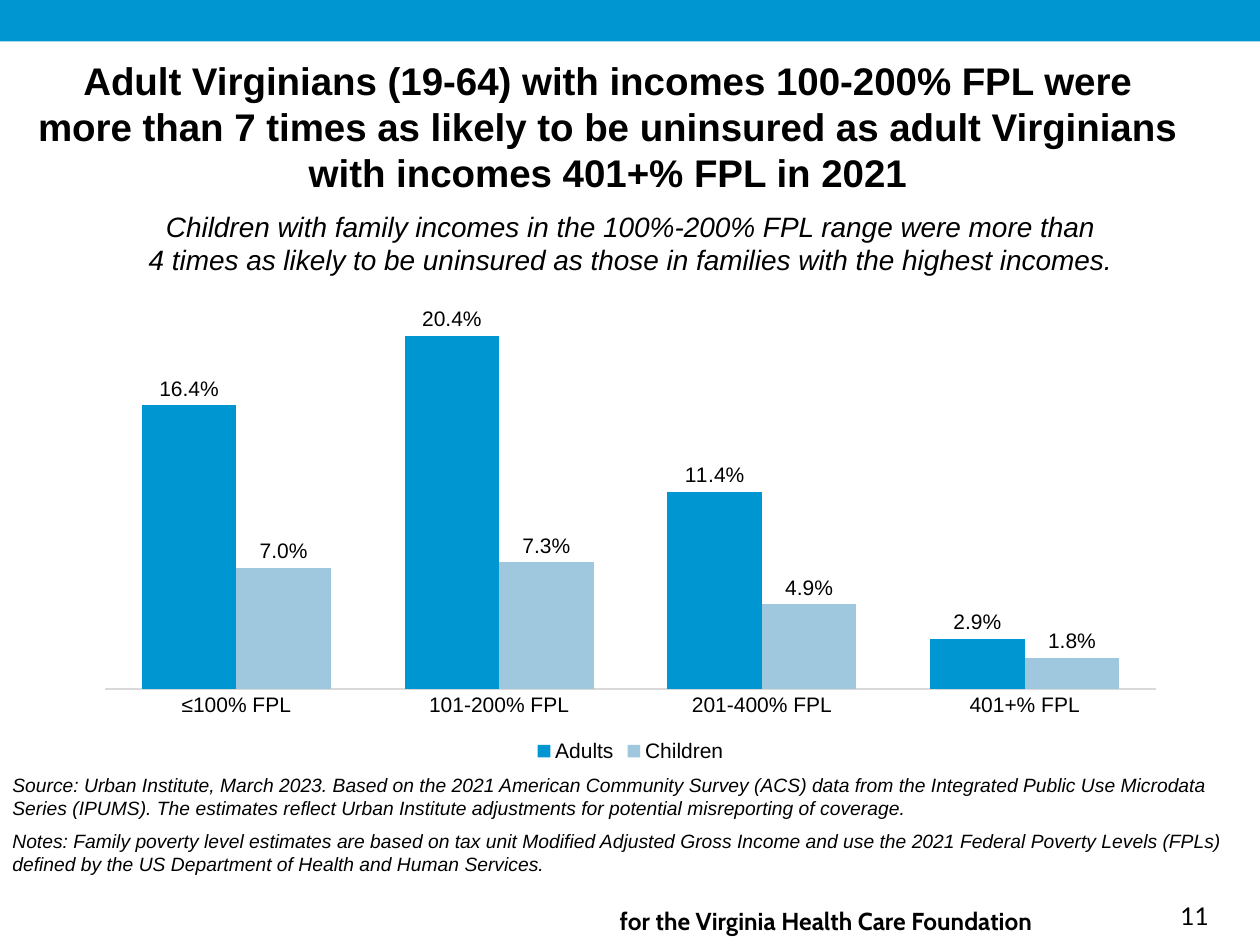
from lxml import etree
from pptx import Presentation, util as u
from pptx.chart.data import CategoryChartData
from pptx.dml.color import RGBColor
from pptx.enum import chart as charts, shapes, text
from pptx.oxml.ns import qn

COLORS = {"adults": "0096D2", "children": "9FC7DE", "ink": "000000", "axis": "D9D9D9"}
WIDTH, HEIGHT = u.Inches(10), u.Inches(7.5)


class SlideBuilder:
    """Hold the style and slide; boxes are percentages of the slide's size."""

    def __init__(self, slide, font_name="Arial"):
        self.slide = slide
        self.font_name = font_name

    def color(self, name):
        return RGBColor.from_string(COLORS[name])

    def place(self, box):
        return [int(share * side / 100) for share, side in zip(box, (WIDTH, HEIGHT) * 2)]

    def style(self, font, size, name=None, bold=False, italic=False):
        font.size, font.name = u.Pt(size), name or self.font_name
        font.bold, font.italic = bold, italic
        font.color.rgb = self.color("ink")

    def band(self, box, color):
        shape = self.slide.shapes.add_shape(shapes.MSO_SHAPE.RECTANGLE, *self.place(box))
        shape.shadow.inherit = False
        shape.fill.solid()
        shape.fill.fore_color.rgb = self.color(color)
        shape.line.fill.background()

    def text(self, box, lines, size, centered=False, gap=0, **look):
        frame = self.slide.shapes.add_textbox(*self.place(box)).text_frame
        frame.word_wrap = True
        for index, line in enumerate(lines):
            paragraph = frame.add_paragraph() if index else frame.paragraphs[0]
            paragraph.text = line
            if centered:
                paragraph.alignment = text.PP_ALIGN.CENTER
            if index and gap:
                paragraph.space_before = u.Pt(gap)
            self.style(paragraph.font, size, **look)

    def columns(self, box, categories, series, layout, size=12):
        data = CategoryChartData(number_format="0.0%")
        data.categories = categories
        for name, values, _ in series:
            data.add_series(name, values)
        chart = self.slide.shapes.add_chart(
            charts.XL_CHART_TYPE.COLUMN_CLUSTERED, *self.place(box), data).chart
        self.style(chart.font, size)
        chart.has_title = False
        chart.has_legend = True
        chart.legend.position = charts.XL_LEGEND_POSITION.BOTTOM
        chart.legend.include_in_layout = False
        self.style(chart.legend.font, size)

        values = chart.value_axis
        values.visible = values.has_major_gridlines = False
        values.minimum_scale, values.maximum_scale = 0, 0.25
        axis = chart.category_axis
        axis.major_tick_mark = charts.XL_TICK_MARK.NONE
        axis.format.line.color.rgb = self.color("axis")
        axis.format.line.width = u.Pt(0.75)
        self.style(axis.tick_labels.font, size)

        plot = chart.plots[0]
        plot.gap_width, plot.overlap, plot.vary_by_categories = 78, 0, False
        for bars, (_, _, color) in zip(plot.series, series):
            bars.format.fill.solid()
            bars.format.fill.fore_color.rgb = self.color(color)
            labels = bars.data_labels
            labels.show_value = True
            labels.number_format, labels.number_format_is_linked = "0.0%", False
            labels.position = charts.XL_LABEL_POSITION.OUTSIDE_END
            self.style(labels.font, size)
        self.fix_plot(chart, layout)

    def fix_plot(self, chart, layout):
        area = chart.plots[0]._element.getparent()
        for old in area.findall(qn("c:layout")):
            area.remove(old)
        holder = etree.Element(qn("c:layout"))
        area.insert(0, holder)
        manual = etree.SubElement(holder, qn("c:manualLayout"))
        settings = [("layoutTarget", "inner"), ("xMode", "edge"), ("yMode", "edge")]
        for tag, value in settings + list(zip("xywh", layout)):
            etree.SubElement(manual, qn("c:" + tag)).set("val", str(value))


def main():
    presentation = Presentation()
    presentation.slide_width, presentation.slide_height = WIDTH, HEIGHT
    builder = SlideBuilder(presentation.slides.add_slide(presentation.slide_layouts[6]))

    builder.band((0, 0, 100, 4.4), "adults")
    builder.text((92.7, 94.67, 7.3, 4.53), ["11"], 14, name="Lato")
    builder.text((1.5, 5.33, 93.5, 16.13), [
        "Adult Virginians (19-64) with incomes 100-200% FPL were more than 7 times as likely "
        "to be uninsured as adult Virginians with incomes 401+% FPL in 2021",
    ], 22, centered=True, bold=True)
    builder.text((0, 81.2, 100, 12.4), [
        "Source: Urban Institute, March 2023. Based on the 2021 American Community Survey (ACS) "
        "data from the Integrated Public Use Microdata Series (IPUMS). The estimates reflect "
        "Urban Institute adjustments for potential misreporting of coverage.",
        "Notes: Family poverty level estimates are based on tax unit Modified Adjusted Gross "
        "Income and use the 2021 Federal Poverty Levels (FPLs) defined by the US Department of "
        "Health and Human Services.",
    ], 11, gap=5.5, italic=True)
    builder.text((48.2, 95.2, 48.5, 3.47), ["for the Virginia Health Care Foundation"],
                 14, name="Cabin", bold=True)
    builder.columns(
        (6.6, 26, 86.9, 55.2),
        ["≤100% FPL", "101-200% FPL", "201-400% FPL", "401+% FPL"],
        [("Adults", (0.164, 0.204, 0.114, 0.029), "adults"),
         ("Children", (0.07, 0.073, 0.049, 0.018), "children")],
        layout=(0.02, 0.02, 0.96, 0.83))
    builder.text((10.5, 21.47, 79.1, 8.53), [
        "Children with family incomes in the 100%-200% FPL range were more than",
        "4 times as likely to be uninsured as those in families with the highest incomes.",
    ], 16, centered=True, italic=True)
    presentation.save("out.pptx")


if __name__ == "__main__":
    main()
